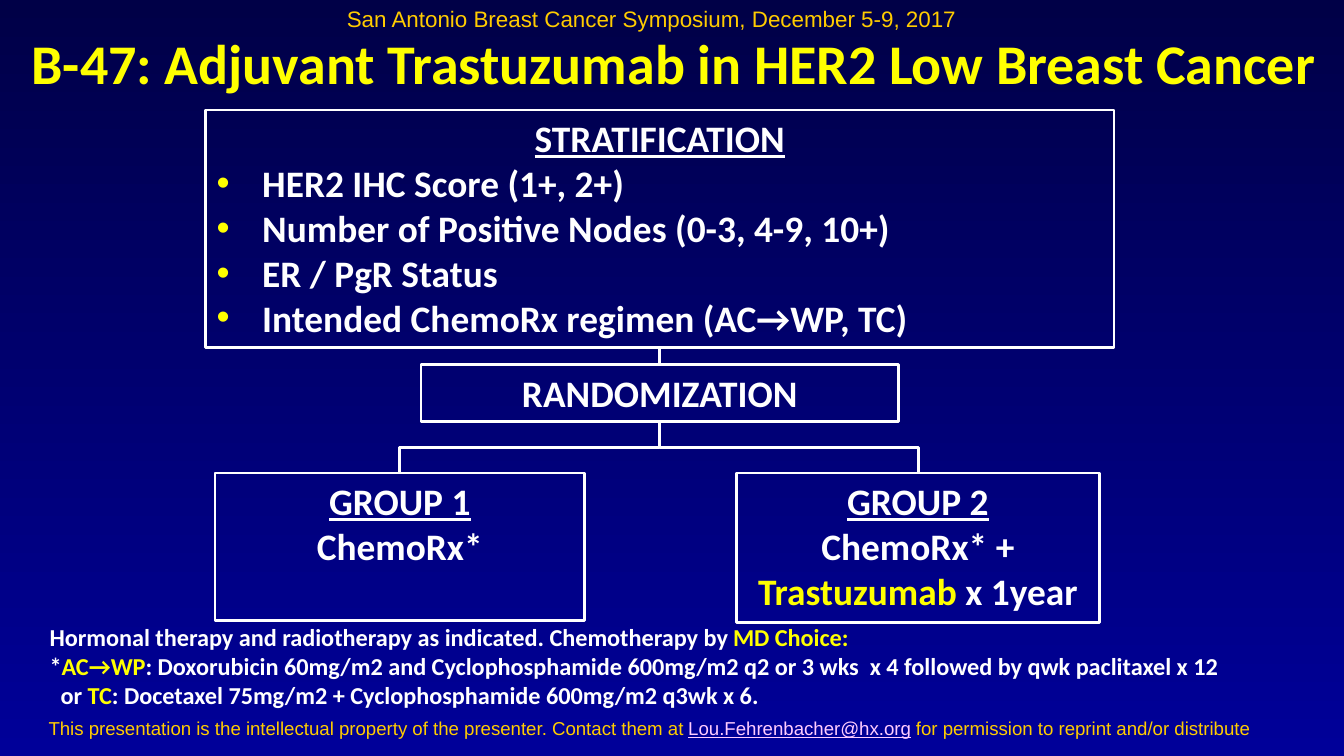
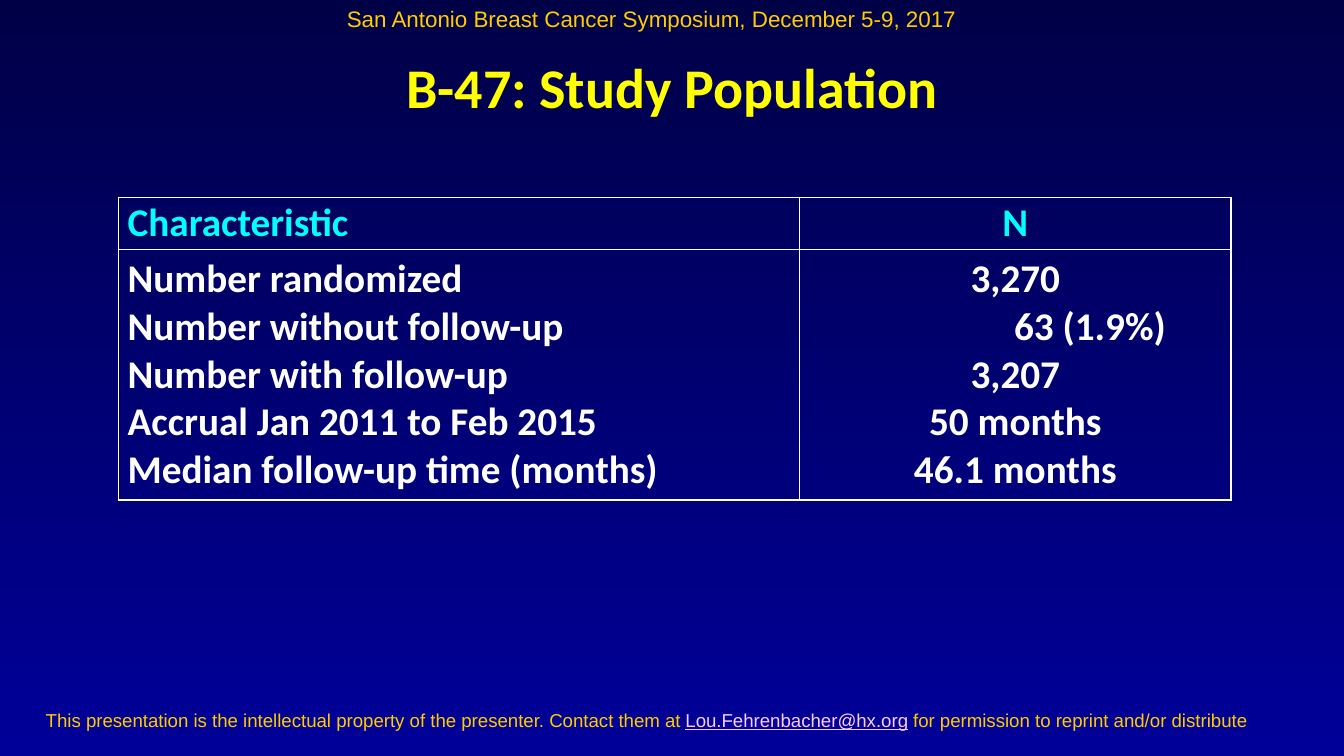
from dataclasses import dataclass

from lxml import etree
from pptx import Presentation
from pptx.dml.color import RGBColor
from pptx.enum.shapes import MSO_CONNECTOR, MSO_SHAPE
from pptx.enum.text import MSO_ANCHOR, MSO_AUTO_SIZE, PP_ALIGN
from pptx.oxml.ns import qn
from pptx.util import Pt

LEFT, CENTER = PP_ALIGN.LEFT, PP_ALIGN.CENTER
TOP, MIDDLE = MSO_ANCHOR.TOP, MSO_ANCHOR.MIDDLE
STRAIGHT, ELBOW = MSO_CONNECTOR.STRAIGHT, MSO_CONNECTOR.ELBOW
RECTANGLE, FIXED_SIZE = MSO_SHAPE.RECTANGLE, MSO_AUTO_SIZE.NONE
TOP_SIDE, BOTTOM_SIDE = 0, 2
TITLE_ONLY = 5


@dataclass(frozen=True)
class Theme:
    background_top: str = "000047"
    background_bottom: str = "000099"
    white: str = "FFFFFF"
    yellow: str = "FFFF00"
    cyan: str = "00FFFF"
    gold: str = "FFCC00"
    pink: str = "FFCCFF"
    heading_font: str = "Calibri"
    notice_font: str = "Arial"
    title_size: float = 30
    table_size: float = 21
    box_size: float = 20
    regimen_size: float = 13
    symposium_size: float = 12
    notice_size: float = 10
    line_width: float = 1.5
    border_width: float = 1


THEME = Theme()


def text_style(size, colour, font=THEME.heading_font, bold=True):
    return {"name": font, "size": Pt(size), "bold": bold, "colour": colour}


TITLE = text_style(THEME.title_size, THEME.yellow)
BOX = text_style(THEME.box_size, THEME.white)
REGIMEN = text_style(THEME.regimen_size, THEME.white)
TABLE_HEADER = text_style(THEME.table_size, THEME.cyan)
TABLE_BODY = text_style(THEME.table_size, THEME.white)
SYMPOSIUM = text_style(THEME.symposium_size, THEME.gold, THEME.notice_font, False)
NOTICE = text_style(THEME.notice_size, THEME.gold, THEME.notice_font, False)
HIGHLIGHT = {"colour": THEME.yellow}
UNDERLINED = {"underline": True}
ADDRESS = {"colour": THEME.pink, "underline": True}


# Formatting
def apply(target, values):
    for name, value in values.items():
        setattr(target, name, value)


def points(values):
    return [Pt(value) for value in values]


def add_xml(parent, tag, **attributes):
    return etree.SubElement(parent, qn(tag), attributes)


def write_lines(text_frame, lines, style, alignment=LEFT, **paragraph_format):
    """Each line is a string or a list of (text, format changes) runs."""
    for index, line in enumerate(lines):
        paragraph = text_frame.paragraphs[0] if index == 0 else text_frame.add_paragraph()
        apply(paragraph, {"alignment": alignment, **paragraph_format})
        for text, changes in [(line, {})] if isinstance(line, str) else line:
            run = paragraph.add_run()
            run.text = text
            font_format = {**style, **changes}
            run.font.color.rgb = RGBColor.from_string(font_format.pop("colour"))
            apply(run.font, font_format)


def set_frame(text_frame, insets=(5.8, 2.9), anchor=TOP, wrap=True):
    horizontal, vertical = points(insets)
    apply(text_frame, {
        "margin_left": horizontal, "margin_right": horizontal,
        "margin_top": vertical, "margin_bottom": vertical,
        "vertical_anchor": anchor, "word_wrap": wrap, "auto_size": FIXED_SIZE,
    })


def indent(paragraph, left, first_line=0):
    properties = paragraph._p.get_or_add_pPr()
    properties.set("marL", str(Pt(left)))
    properties.set("indent", str(Pt(first_line)))
    return properties


def add_bullet(paragraph):
    properties = indent(paragraph, 24.5, -24.5)
    add_xml(add_xml(properties, "a:buClr"), "a:srgbClr", val=THEME.yellow)
    add_xml(properties, "a:buFont", typeface=THEME.notice_font)
    add_xml(properties, "a:buChar", char="•")


def set_line(line):
    line.color.rgb = RGBColor.from_string(THEME.white)
    line.width = Pt(THEME.line_width)


# Elements
def add_text(slide, bounds, lines, style, insets=(5.8, 2.9)):
    text_frame = slide.shapes.add_textbox(*points(bounds)).text_frame
    set_frame(text_frame, insets)
    write_lines(text_frame, lines, style)
    return text_frame


def add_box(slide, bounds, lines):
    shape = slide.shapes.add_shape(RECTANGLE, *points(bounds))
    shape.shadow.inherit = False
    shape.fill.background()
    set_line(shape.line)
    set_frame(shape.text_frame)
    write_lines(shape.text_frame, lines, BOX, CENTER)
    return shape


def join_boxes(slide, upper, lower, kind=STRAIGHT):
    connector = slide.shapes.add_connector(kind, 0, 0, 0, 0)
    connector.begin_connect(upper, BOTTOM_SIDE)
    connector.end_connect(lower, TOP_SIDE)
    set_line(connector.line)
    add_xml(connector._element.spPr, "a:effectLst")
    if kind == ELBOW:
        turn_elbow(connector)


def turn_elbow(connector):
    """Make the elbow leave and arrive vertically."""
    begin_x, begin_y = connector.begin_x, connector.begin_y
    end_x, end_y = connector.end_x, connector.end_y
    width, height = end_y - begin_y, abs(end_x - begin_x)
    apply(connector, {
        "left": (begin_x + end_x - width) // 2,
        "top": (begin_y + end_y - height) // 2,
        "width": width, "height": height,
    })
    transform = connector._element.spPr.find(qn("a:xfrm"))
    goes_right = end_x > begin_x
    transform.set("rot", str((270 if goes_right else 90) * 60000))
    transform.set("flipH", "1" if goes_right else "0")


def add_borders(cell):
    properties = cell._tc.get_or_add_tcPr()
    for index, side in enumerate(("a:lnL", "a:lnR", "a:lnT", "a:lnB")):
        border = etree.Element(qn(side), {"w": str(Pt(THEME.border_width))})
        add_xml(add_xml(border, "a:solidFill"), "a:srgbClr", val=THEME.white)
        properties.insert(index, border)


def format_cell(cell, anchor, vertical_margin):
    cell.fill.background()
    add_borders(cell)
    apply(cell, {
        "vertical_anchor": anchor, "margin_left": Pt(5), "margin_right": Pt(5),
        "margin_top": Pt(vertical_margin), "margin_bottom": Pt(vertical_margin),
    })


def add_population_table(slide, bounds, widths, heights, columns):
    table = slide.shapes.add_table(2, len(columns), *points(bounds)).table
    apply(table, {"first_row": False, "horz_banding": False})
    for row, height in zip(table.rows, heights):
        row.height = Pt(height)
    for index, (heading, values, alignment) in enumerate(columns):
        table.columns[index].width = Pt(widths[index])
        header, body = table.cell(0, index), table.cell(1, index)
        format_cell(header, MIDDLE, 0)
        format_cell(body, TOP, 2.9)
        write_lines(header.text_frame, [heading], TABLE_HEADER, alignment,
                    line_spacing=0.9, space_before=Pt(5.8), space_after=Pt(2.5))
        write_lines(body.text_frame, values, TABLE_BODY, alignment)
    return table


# Parts that both slides share
def set_background(presentation):
    fill = presentation.slide_master.background.fill
    fill.gradient()
    fill.gradient_angle = 270
    for stop, colour in zip(fill.gradient_stops, (THEME.background_top, THEME.background_bottom)):
        stop.color.rgb = RGBColor.from_string(colour)


def add_slide(presentation, title, title_bounds, notice_position, anchor=TOP, wrap=True, line_spacing=1.0):
    slide = presentation.slides.add_slide(presentation.slide_layouts[TITLE_ONLY])
    placeholder = slide.shapes.title
    apply(placeholder, dict(zip(("left", "top", "width", "height"), points(title_bounds))))
    set_frame(placeholder.text_frame, anchor=anchor, wrap=wrap)
    write_lines(placeholder.text_frame, [title], TITLE, CENTER, line_spacing=line_spacing)

    add_text(slide, (180, 0, 360, 21), ["San Antonio Breast Cancer Symposium, December 5-9, 2017"], SYMPOSIUM)
    add_text(slide, (*notice_position, 681, 18), [[
        ("This presentation is the intellectual property of the presenter. Contact them at ", {}),
        ("Lou.Fehrenbacher@hx.org", ADDRESS),
        (" for permission to reprint and/or distribute", {}),
    ]], NOTICE)
    return slide


# Slides
def build_design_slide(presentation):
    slide = add_slide(presentation, "B-47: Adjuvant Trastuzumab in HER2 Low Breast Cancer",
                      (10.8, 12.2, 700.6, 42.5), (20.2, 380.9), wrap=False)

    # Trial flow
    stratification = add_box(slide, (110.2, 59, 486.6, 127.4), [[("STRATIFICATION", UNDERLINED)]])
    factors = [
        "HER2 IHC Score (1+, 2+)",
        "Number of Positive Nodes (0-3, 4-9, 10+)",
        "ER / PgR Status",
        "Intended ChemoRx regimen (AC→WP, TC)",
    ]
    for factor in factors:
        paragraph = stratification.text_frame.add_paragraph()
        paragraph.alignment = LEFT
        add_bullet(paragraph)
        run = paragraph.add_run()
        run.text = factor
        font_format = dict(BOX)
        run.font.color.rgb = RGBColor.from_string(font_format.pop("colour"))
        apply(run.font, font_format)
    randomization = add_box(slide, (225.5, 195.2, 256, 30.6), ["RANDOMIZATION"])
    groups = [
        add_box(slide, (115.2, 253.4, 198, 79.2), [[("GROUP 1", UNDERLINED)], "ChemoRx*"]),
        add_box(slide, (394.6, 253.4, 194.4, 80), [
            [("GROUP 2", UNDERLINED)],
            "ChemoRx* +",
            [("Trastuzumab", HIGHLIGHT), (" x 1year", {})],
        ]),
    ]
    join_boxes(slide, stratification, randomization)
    for group in groups:
        join_boxes(slide, randomization, group, ELBOW)

    # Chemotherapy regimens
    regimens = add_text(slide, (26.6, 333.4, 643, 47.5), [
        [("Hormonal therapy and radiotherapy as indicated. Chemotherapy by ", {}), ("MD Choice:", HIGHLIGHT)],
        [("*", {}), ("AC→WP", HIGHLIGHT),
         (": Doxorubicin 60mg/m2 and Cyclophosphamide 600mg/m2 q2 or 3 wks  x 4 "
          "followed by qwk paclitaxel x 12", {})],
        [("or ", {}), ("TC", HIGHLIGHT),
         (": Docetaxel 75mg/m2 + Cyclophosphamide 600mg/m2 q3wk x 6.", {})],
    ], REGIMEN, insets=(0, 0))
    indent(regimens.paragraphs[2], 5.9)


def build_population_slide(presentation):
    slide = add_slide(presentation, "B-47: Study Population", (27.4, 20.9, 665.3, 54.7),
                      (18.7, 376.6), anchor=MIDDLE, line_spacing=0.9)
    characteristics = [
        "Number randomized",
        "Number without follow-up",
        "Number with follow-up",
        "Accrual Jan 2011 to Feb 2015",
        "Median follow-up time (months)",
    ]
    counts = ["3,270", "63 (1.9%)", "3,207", "50 months", "46.1 months"]
    table = add_population_table(
        slide, (63.4, 105.8, 596.1, 159.1), (365, 231.1), (27.8, 131.3),
        [("Characteristic", characteristics, LEFT), ("N", counts, CENTER)])
    values = [table.cell(1, column).text_frame.paragraphs for column in range(2)]
    values[0][-1].space_after = Pt(2.5)
    indent(values[1][1], 80)


def main():
    presentation = Presentation()
    apply(presentation, {"slide_width": Pt(720), "slide_height": Pt(405)})
    set_background(presentation)
    build_design_slide(presentation)
    build_population_slide(presentation)
    presentation.save("out.pptx")


if __name__ == "__main__":
    main()
